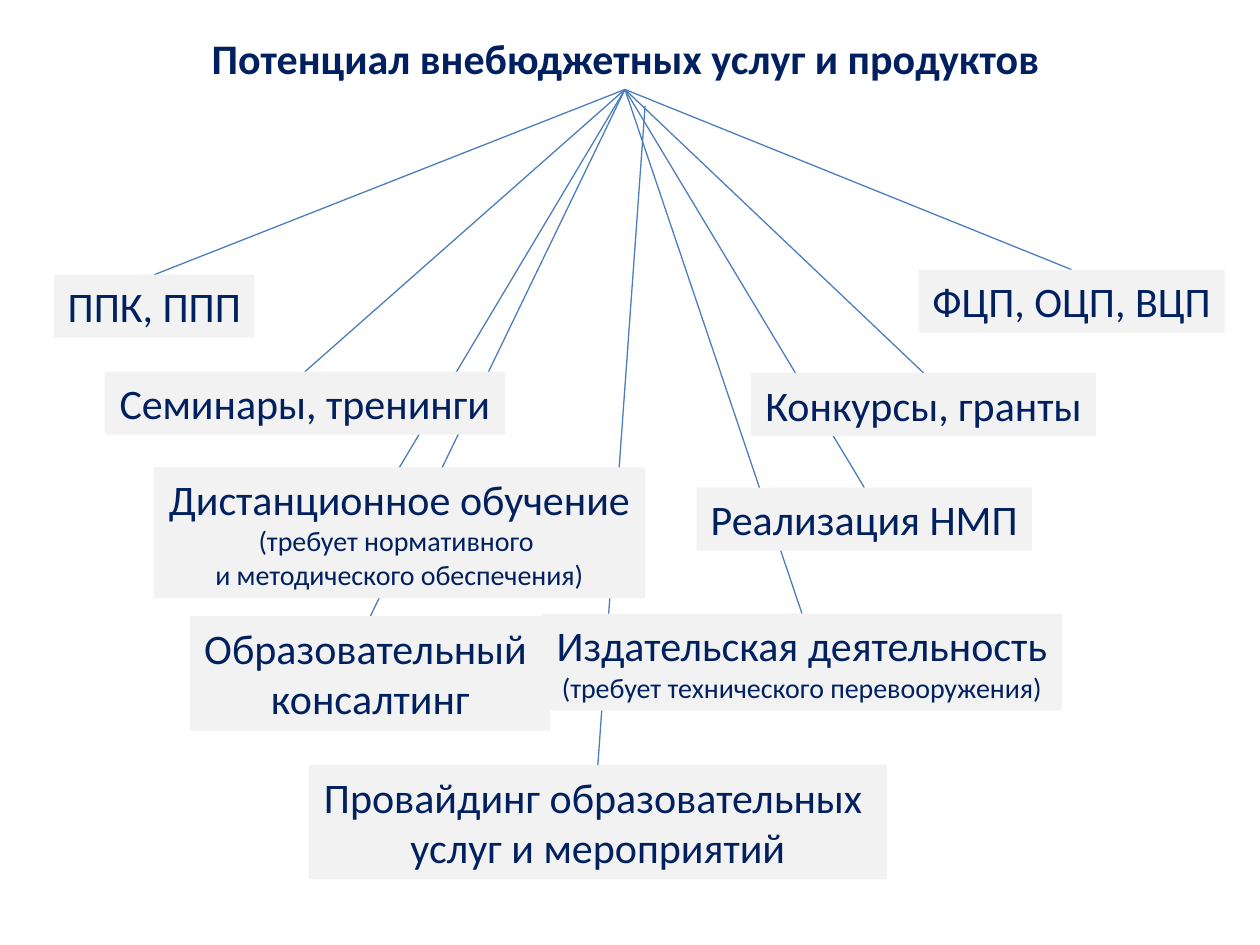
from typing import NamedTuple

from lxml import etree
from pptx import Presentation, util as u
from pptx.dml.color import RGBColor
from pptx.enum import shapes, text
from pptx.oxml.ns import qn

COLORS = {"text": "002060", "box": "F2F2F2", "line": "4B7EBC"}
FONT = "Calibri"
MAIN_SIZE, NOTE_SIZE = 24, 16


class Point(NamedTuple):
    x: float
    y: float


class Service(NamedTuple):
    left: float
    top: float
    width: float
    height: float
    lines: tuple[str, ...]
    notes: tuple[str, ...] = ()
    ray_end: Point = Point(4.96, 0.71)


SERVICES = [
    Service(2.45, 6.07, 4.59, 0.91,
            ("Провайдинг образовательных ", "услуг и мероприятий"),
            ray_end=Point(5.12, 0.84)),
    Service(7.29, 2.14, 2.43, 0.5, ("ФЦП, ОЦП, ВЦП",)),
    Service(5.96, 2.96, 2.74, 0.5, ("Конкурсы, гранты",)),
    Service(5.53, 3.87, 2.66, 0.5, ("Реализация НМП",)),
    Service(0.43, 2.18, 1.59, 0.5, ("ППК, ППП",)),
    Service(0.83, 2.95, 3.18, 0.5, ("Семинары, тренинги",)),
    Service(1.22, 3.71, 3.9, 1.04, ("Дистанционное обучение",),
            ("(требует нормативного ", "и методического обеспечения)")),
    Service(1.51, 4.89, 2.86, 0.91, ("Образовательный ", "консалтинг")),
    Service(4.3, 4.87, 4.13, 0.77, ("Издательская деятельность",),
            ("(требует технического перевооружения)",)),
]


def color(name: str) -> RGBColor:
    return RGBColor.from_string(COLORS[name])


def draw_ray(slide, service: Service) -> None:
    """Join the middle of a box's top edge to the point under the title."""
    connector = slide.shapes.add_connector(
        shapes.MSO_CONNECTOR.STRAIGHT,
        u.Inches(service.left + service.width / 2), u.Inches(service.top),
        u.Inches(service.ray_end.x), u.Inches(service.ray_end.y))
    connector.line.color.rgb = color("line")
    connector.line.width = u.Pt(0.75)
    etree.SubElement(connector._element.spPr, qn("a:effectLst"))


def draw_text(slide, left: float, top: float, width: float, height: float,
              lines: list[tuple[str, int]], bold: bool = False, wrap: bool = False):
    shape = slide.shapes.add_textbox(
        u.Inches(left), u.Inches(top), u.Inches(width), u.Inches(height))
    frame = shape.text_frame
    frame.word_wrap = wrap
    frame.auto_size = text.MSO_AUTO_SIZE.SHAPE_TO_FIT_TEXT
    frame.text = "\n".join(line for line, _ in lines)
    for paragraph, (_, size) in zip(frame.paragraphs, lines):
        paragraph.alignment = text.PP_ALIGN.CENTER
        paragraph.font.name = FONT
        paragraph.font.size = u.Pt(size)
        paragraph.font.bold = bold
        paragraph.font.color.rgb = color("text")
    return shape


def draw_service(slide, service: Service) -> None:
    lines = [(line, MAIN_SIZE) for line in service.lines]
    lines += [(note, NOTE_SIZE) for note in service.notes]
    box = draw_text(slide, service.left, service.top, service.width, service.height, lines)
    box.fill.solid()
    box.fill.fore_color.rgb = color("box")


def main() -> None:
    presentation = Presentation()
    presentation.slide_width = u.Inches(10)
    presentation.slide_height = u.Inches(7.5)
    slide = presentation.slides.add_slide(presentation.slide_layouts[6])

    for service in SERVICES:
        draw_ray(slide, service)
    draw_text(slide, 0.28, 0.21, 9.37, 0.5,
              [("Потенциал внебюджетных услуг и продуктов", MAIN_SIZE)],
              bold=True, wrap=True)
    for service in SERVICES:
        draw_service(slide, service)

    presentation.save("out.pptx")


if __name__ == "__main__":
    main()
